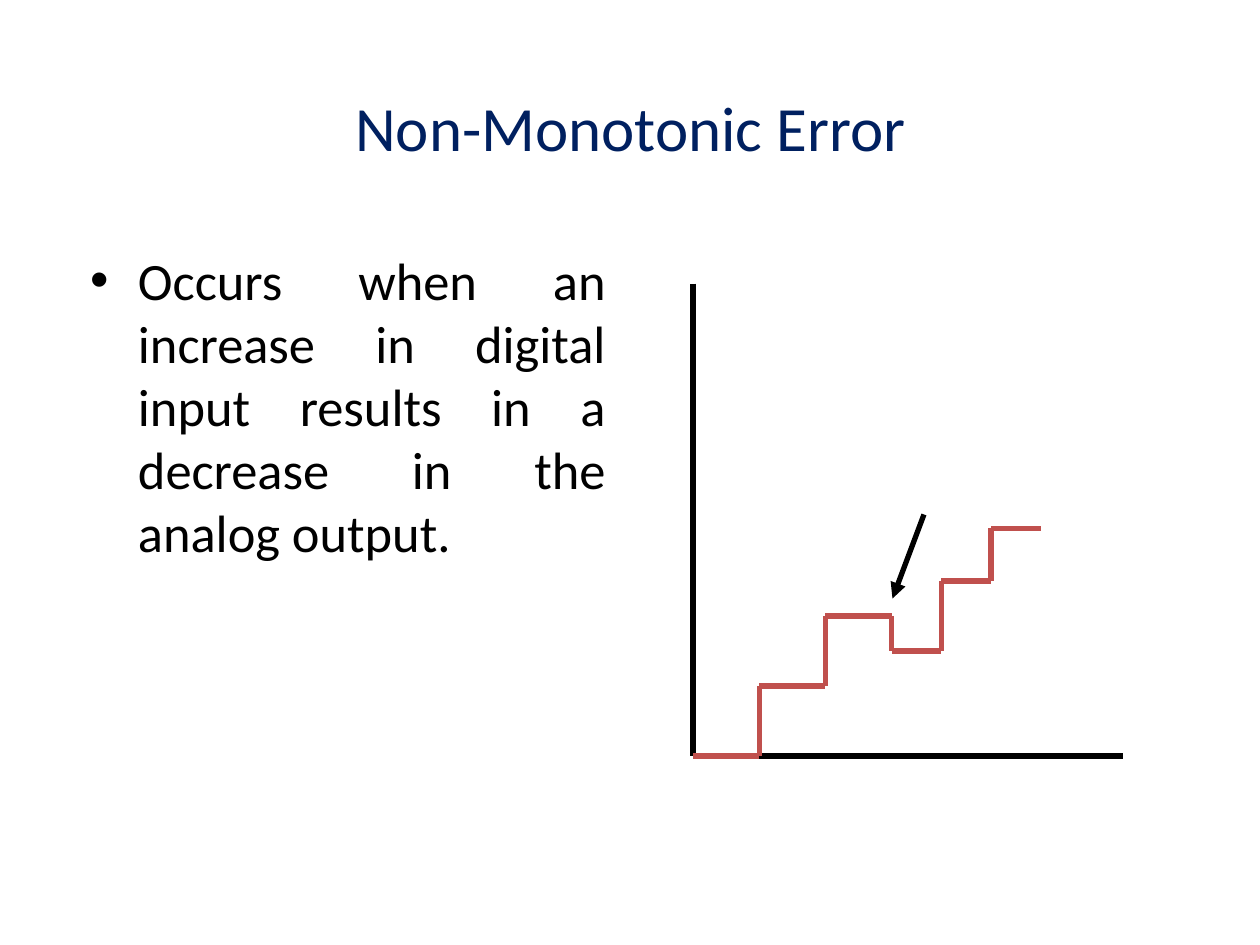
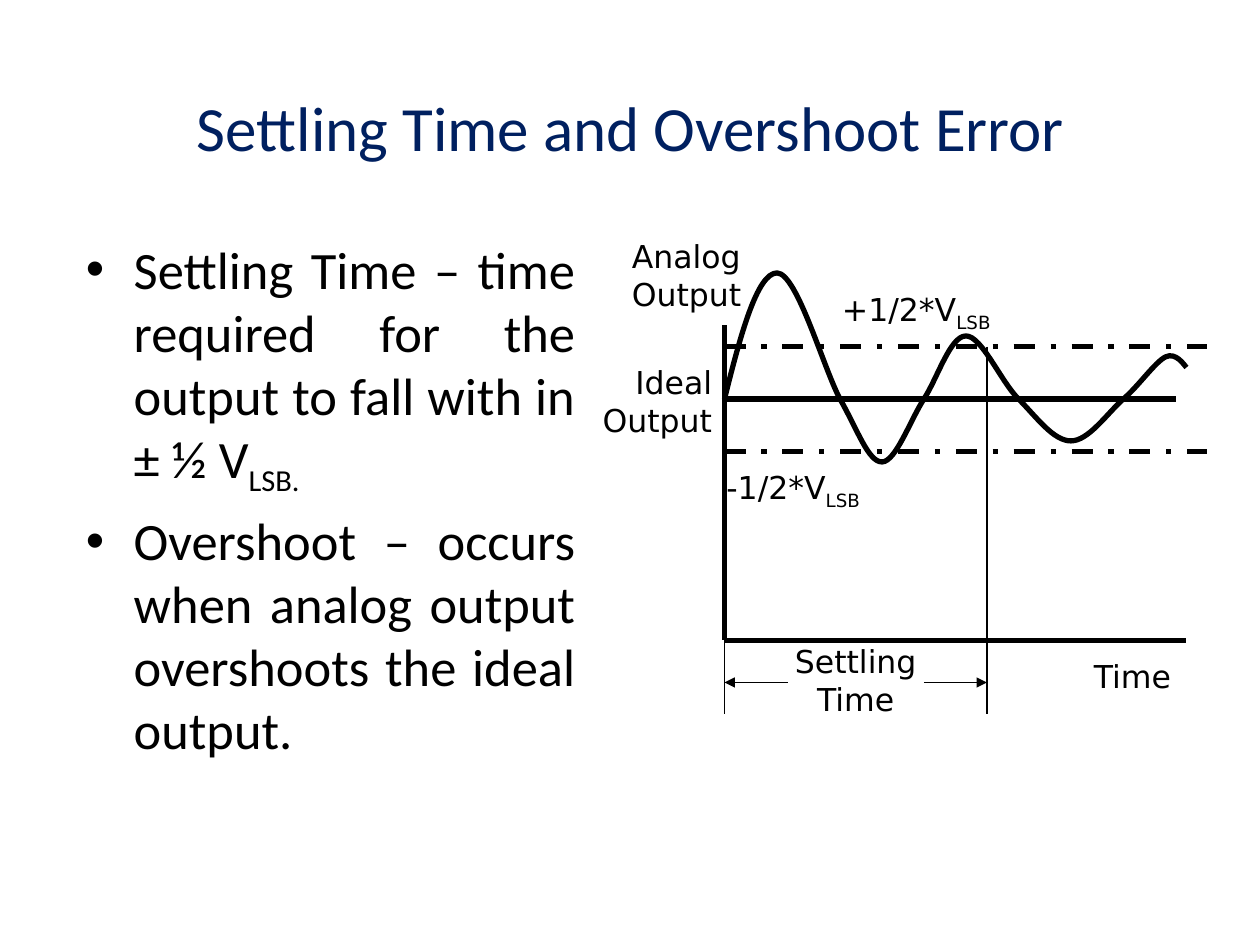
from dataclasses import dataclass
from itertools import pairwise

from lxml.etree import Element, SubElement
from pptx import Presentation
from pptx.dml.color import RGBColor
from pptx.enum.dml import MSO_LINE
from pptx.enum.shapes import MSO_CONNECTOR
from pptx.enum.text import MSO_ANCHOR, PP_ALIGN
from pptx.oxml.ns import qn
from pptx.slide import Slide
from pptx.util import Inches, Pt

Point = tuple[float, float]

COLORS = {"title": "002060", "ink": "000000", "steps": "C0504D"}
BODY_FONT, LABEL_FONT = "Calibri", "DejaVu Sans"
SLIDE_WIDTH, SLIDE_HEIGHT = Inches(10), Inches(7.5)
COLUMNS, ROWS = 120, 90
COLUMN, ROW = SLIDE_WIDTH // COLUMNS, SLIDE_HEIGHT // ROWS
HEAVY, LIGHT, HAIRLINE = 3, 1, 0.75
HANGING_INDENT = Inches(0.38)


@dataclass(frozen=True)
class Box:
    column: float
    row: float
    columns: float
    rows: float


@dataclass(frozen=True)
class Line:
    start: Point
    end: Point
    width: float = HEAVY
    color: str = "ink"
    dashed: bool = False
    arrow: bool = False


@dataclass(frozen=True)
class Label:
    text: str
    box: Box
    subscript: str = ""
    align: PP_ALIGN = PP_ALIGN.LEFT


TITLE_BOX = Box(7.56, 4, 105, 16)

STEP_AXES = [Line((66, 27), (66, 72)), Line((66, 72), (107, 72))]
STEP_COLUMN, STEP_ROW = 41 / 13, 10 / 3
STEP_EDGES = [0, 2, 4, 6, 7.5, 9, 10.5]
STEP_LEVELS = [0, 2, 4, 3, 5, 6.5]
DROP_ARROW = Line((88, 49), (85, 57), arrow=True)

AXIS_COLUMN, AXIS_ROW, IDEAL_ROW = 69, 61, 38
TOLERANCE_ROWS = (33, 43)
SETTLED_COLUMN, EXTENSION_ROW, SPAN_ROW = 94, 68, 65
RESPONSE_LINES = [
    Line((AXIS_COLUMN, 31), (AXIS_COLUMN, AXIS_ROW)),
    Line((AXIS_COLUMN, AXIS_ROW), (113, AXIS_ROW)),
    Line((AXIS_COLUMN, IDEAL_ROW), (112, IDEAL_ROW)),
    *(Line((AXIS_COLUMN, row), (115, row), dashed=True) for row in TOLERANCE_ROWS),
    Line((AXIS_COLUMN, AXIS_ROW), (AXIS_COLUMN, EXTENSION_ROW), HAIRLINE),
    Line((SETTLED_COLUMN, TOLERANCE_ROWS[0]), (SETTLED_COLUMN, EXTENSION_ROW), HAIRLINE),
    Line((88, SPAN_ROW), (SETTLED_COLUMN, SPAN_ROW), LIGHT, arrow=True),
    Line((75, SPAN_ROW), (AXIS_COLUMN, SPAN_ROW), LIGHT, arrow=True),
]
RESPONSE_START = (AXIS_COLUMN, IDEAL_ROW)
RESPONSE_CURVE = [
    ((70.5, 32), (72.1, 26), (74, 26)),
    ((75.9, 26), (78.4, 35), (80, 38)),
    ((81.7, 41), (82.7, 44), (84, 44)),
    ((85.3, 44), (86.7, 40), (88, 38)),
    ((89.3, 36), (90.5, 32), (92, 32)),
    ((93.5, 32), (95.3, 36.3), (97, 38)),
    ((98.7, 39.7), (100.3, 42), (102, 42)),
    ((103.7, 42), (105.5, 39.3), (107, 38)),
    ((108.5, 36.7), (110, 34.5), (111, 34)),
    ((112, 33.5), (112.8, 34.8), (113, 35)),
]
RESPONSE_LABELS = [
    Label("Settling Time", Box(74, 60.6, 15, 8.4), align=PP_ALIGN.CENTER),
    Label("+1/2*V", Box(79, 27, 20, 4.8), "LSB"),
    Label("-1/2*V", Box(68, 44, 21, 4.8), "LSB"),
    Label("Time", Box(103, 62, 11, 4.8)),
    Label("Analog Output", Box(59, 22, 14, 8.4)),
    Label("Ideal Output", Box(56, 34, 13, 8.4), align=PP_ALIGN.RIGHT),
]


def place(point: Point) -> tuple[int, int]:
    return round(point[0] * COLUMN), round(point[1] * ROW)


def add_text(slide: Slide, paragraphs: list[tuple[str, str]], box: Box, *, font: str,
             size: float, color: str = "ink", align: PP_ALIGN = PP_ALIGN.LEFT,
             anchor: MSO_ANCHOR = MSO_ANCHOR.TOP, bullet: bool = False) -> None:
    shape = slide.shapes.add_textbox(*place((box.column, box.row)),
                                     *place((box.columns, box.rows)))
    frame = shape.text_frame
    frame.word_wrap = True
    frame.vertical_anchor = anchor
    for index, (text, subscript) in enumerate(paragraphs):
        paragraph = frame.add_paragraph() if index else frame.paragraphs[0]
        paragraph.alignment = align
        if bullet:
            paragraph.space_before = Pt(size * 0.2)
            properties = paragraph._p.get_or_add_pPr()
            properties.set("marL", str(HANGING_INDENT))
            properties.set("indent", str(-HANGING_INDENT))
            SubElement(properties, qn("a:buFont"), typeface="Arial")
            SubElement(properties, qn("a:buChar"), char="•")
        for content, baseline in ((text, 0), (subscript, -25000)):
            if content:
                run = paragraph.add_run()
                run.text = content
                run.font.name = font
                run.font.size = Pt(size)
                run.font.color.rgb = RGBColor.from_string(COLORS[color])
                if baseline:
                    run._r.get_or_add_rPr().set("baseline", str(baseline))


def add_line(slide: Slide, line: Line) -> None:
    connector = slide.shapes.add_connector(MSO_CONNECTOR.STRAIGHT,
                                           *place(line.start), *place(line.end))
    connector.line.width = Pt(line.width)
    connector.line.color.rgb = RGBColor.from_string(COLORS[line.color])
    if line.dashed:
        connector.line.dash_style = MSO_LINE.DASH_DOT
    if line.arrow:
        SubElement(connector.line._get_or_add_ln(), qn("a:tailEnd"), type="triangle")
    SubElement(connector._element.spPr, qn("a:effectLst"))


def add_curve(slide: Slide, start: Point, segments: list[tuple[Point, ...]]) -> None:
    builder = slide.shapes.build_freeform(*place(start))
    builder.add_line_segments([place(segment[-1]) for segment in segments], close=False)
    shape = builder.convert_to_shape()
    straight_segments = list(shape._element.iter(qn("a:lnTo")))
    for straight, controls in zip(straight_segments, segments):
        curve = Element(qn("a:cubicBezTo"))
        for x, y in map(place, controls):
            SubElement(curve, qn("a:pt"), x=str(x - shape.left), y=str(y - shape.top))
        straight.getparent().replace(straight, curve)
    shape.shadow.inherit = False
    shape.fill.background()
    shape.line.width = Pt(HEAVY)
    shape.line.color.rgb = RGBColor.from_string(COLORS["ink"])


def add_content_slide(presentation: Presentation, title: str,
                      bullets: list[tuple[str, str]], body_box: Box) -> Slide:
    slide = presentation.slides.add_slide(presentation.slide_layouts[6])
    add_text(slide, [(title, "")], TITLE_BOX, font=BODY_FONT, size=36, color="title",
             align=PP_ALIGN.CENTER, anchor=MSO_ANCHOR.MIDDLE)
    add_text(slide, bullets, body_box, font=BODY_FONT, size=30,
             align=PP_ALIGN.JUSTIFY, bullet=True)
    return slide


def staircase() -> list[Line]:
    left, bottom = STEP_AXES[0].end
    corners = [(left + edge * STEP_COLUMN, bottom - level * STEP_ROW)
               for level, edges in zip(STEP_LEVELS, pairwise(STEP_EDGES))
               for edge in edges]
    return [Line(start, end, color="steps") for start, end in pairwise(corners)]


def build_non_monotonic(presentation: Presentation) -> None:
    slide = add_content_slide(
        presentation, "Non-Monotonic Error",
        [("Occurs when an increase in digital input results in a decrease "
          "in the analog output.", "")], Box(7.4, 23, 51.5, 56))
    for line in [*STEP_AXES, *staircase(), DROP_ARROW]:
        add_line(slide, line)


def build_settling_time(presentation: Presentation) -> None:
    slide = add_content_slide(
        presentation, "Settling Time and Overshoot Error",
        [("Settling Time – time required for the output to fall with in ± ½ V", "LSB."),
         ("Overshoot – occurs when analog output overshoots the ideal output.", "")],
        Box(7, 22, 49, 56))
    for line in RESPONSE_LINES:
        add_line(slide, line)
    add_curve(slide, RESPONSE_START, RESPONSE_CURVE)
    for label in RESPONSE_LABELS:
        add_text(slide, [(label.text, label.subscript)], label.box,
                 font=LABEL_FONT, size=18, align=label.align)


def main() -> None:
    presentation = Presentation()
    presentation.slide_width, presentation.slide_height = SLIDE_WIDTH, SLIDE_HEIGHT
    build_non_monotonic(presentation)
    build_settling_time(presentation)
    presentation.save("out.pptx")


if __name__ == "__main__":
    main()
